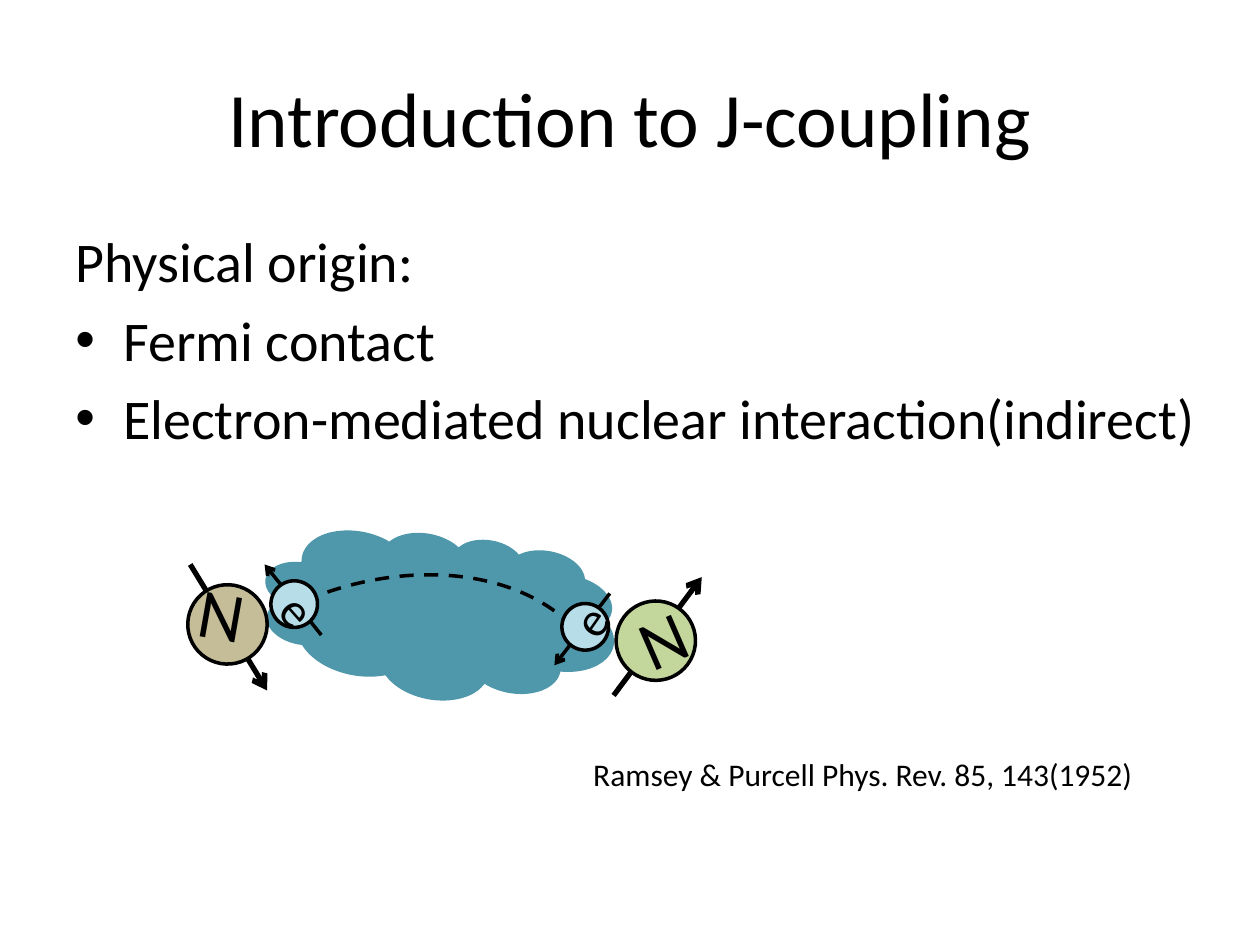
from lxml import etree
from pptx import Presentation
from pptx.dml.color import RGBColor
from pptx.enum.dml import MSO_LINE
from pptx.enum.shapes import MSO_CONNECTOR, MSO_SHAPE
from pptx.enum.text import MSO_ANCHOR, PP_ALIGN
from pptx.oxml.ns import qn
from pptx.util import Inches, Pt

CENTER, MIDDLE = PP_ALIGN.CENTER, MSO_ANCHOR.MIDDLE
BLACK = "000000"


def rgb(value):
    return RGBColor.from_string(value)


def add_text(p, text, size):
    r = p.add_run()
    r.text = text
    r.font.name = "Calibri"
    r.font.size = Pt(size)
    r.font.color.rgb = rgb(BLACK)


prs = Presentation()
prs.slide_width, prs.slide_height = Inches(10), Inches(7.5)
s = prs.slides.add_slide(prs.slide_layouts[5])

# Title
title = s.shapes.title
title.left, title.top = Inches(0.5), Inches(0.3)
title.width, title.height = Inches(9), Inches(1.25)
title.text_frame.vertical_anchor = MIDDLE
p = title.text_frame.paragraphs[0]
p.alignment = CENTER
add_text(p, "Introduction to J-coupling", 44)

# Body: heading line and bullets
body = s.shapes.add_textbox(Inches(0.5), Inches(1.75), Inches(9.11), Inches(5.05))
tf = body.text_frame
tf.word_wrap = True
lines = ["Physical origin:", "Fermi contact", "Electron-mediated nuclear interaction(indirect)"]
for i, line in enumerate(lines):
    p = tf.paragraphs[0] if i == 0 else tf.add_paragraph()
    p.space_before = Pt(6.4)
    pPr = p._p.get_or_add_pPr()
    pPr.set("marL", str(Inches(0.38)))
    pPr.set("indent", str(-Inches(0.38)))
    if i:
        etree.SubElement(pPr, qn("a:buFont")).set("typeface", "Arial")
        etree.SubElement(pPr, qn("a:buChar")).set("char", "•")
    add_text(p, line, 32)

# Electron cloud
diagram = s.shapes.add_group_shape().shapes
cloud = diagram.add_shape(MSO_SHAPE.CLOUD, Inches(2.08), Inches(4.22), Inches(2.81), Inches(1.33))
cloud.rotation = 10.4
cloud.shadow.inherit = False
cloud.fill.solid()
cloud.fill.fore_color.rgb = rgb("31859C")
color = cloud.fill._xPr.find(qn("a:solidFill"))[0]
etree.SubElement(color, qn("a:alpha")).set("val", "85000")
cloud.line.fill.background()

# Nuclei and electrons, each a circle over its spin arrow:
# label, text size, left, top, diameter, rotation, fill, arrow ends, arrow width
particles = [
    ("N", 40, 1.49, 4.64, 0.63, 190, "C4BD97", (1.51, 4.48, 2.12, 5.48), 3),
    ("N", 40, 4.89, 4.77, 0.63, 336.5, "C3D69B", (4.87, 5.52, 5.57, 4.58), 3),
    ("e", 28, 2.15, 4.61, 0.37, 48.6, "B7DEE8", (2.55, 5.04, 2.1, 4.48), 2),
    ("e", 28, 4.46, 4.79, 0.37, 304.9, "B7DEE8", (4.84, 4.71, 4.4, 5.28), 2),
]
for label, size, left, top, diameter, angle, fill, ends, width in particles:
    spin = diagram.add_connector(MSO_CONNECTOR.STRAIGHT, *[Inches(v) for v in ends])
    spin.line.color.rgb = rgb(BLACK)
    spin.line.width = Pt(width)
    etree.SubElement(spin.line._get_or_add_ln(), qn("a:tailEnd")).set("type", "arrow")
    etree.SubElement(spin._element.spPr, qn("a:effectLst"))

    sp = diagram.add_shape(MSO_SHAPE.OVAL, Inches(left), Inches(top), Inches(diameter), Inches(diameter))
    sp.rotation = angle
    sp.shadow.inherit = False
    sp.fill.solid()
    sp.fill.fore_color.rgb = rgb(fill)
    sp.line.color.rgb = rgb(BLACK)
    sp.line.width = Pt(2)
    sp.text_frame.vertical_anchor = MIDDLE
    p = sp.text_frame.paragraphs[0]
    p.alignment = CENTER
    add_text(p, label, size)

# Dashed coupling path between the electrons
arc = diagram.add_shape(MSO_SHAPE.ARC, Inches(1.17), Inches(4.63), Inches(3.69), Inches(2.58))
arc.adjustments[0], arc.adjustments[1] = 162, 206.57
arc.rotation = 341.2
arc.shadow.inherit = False
arc.fill.background()
arc.line.color.rgb = rgb(BLACK)
arc.line.width = Pt(2)
arc.line.dash_style = MSO_LINE.DASH

# Reference
reference = s.shapes.add_textbox(Inches(4.61), Inches(5.94), Inches(4.61), Inches(0.4))
reference.text_frame.word_wrap = True
add_text(reference.text_frame.paragraphs[0], "Ramsey & Purcell Phys. Rev. 85, 143(1952)", 18)

prs.save("out.pptx")
